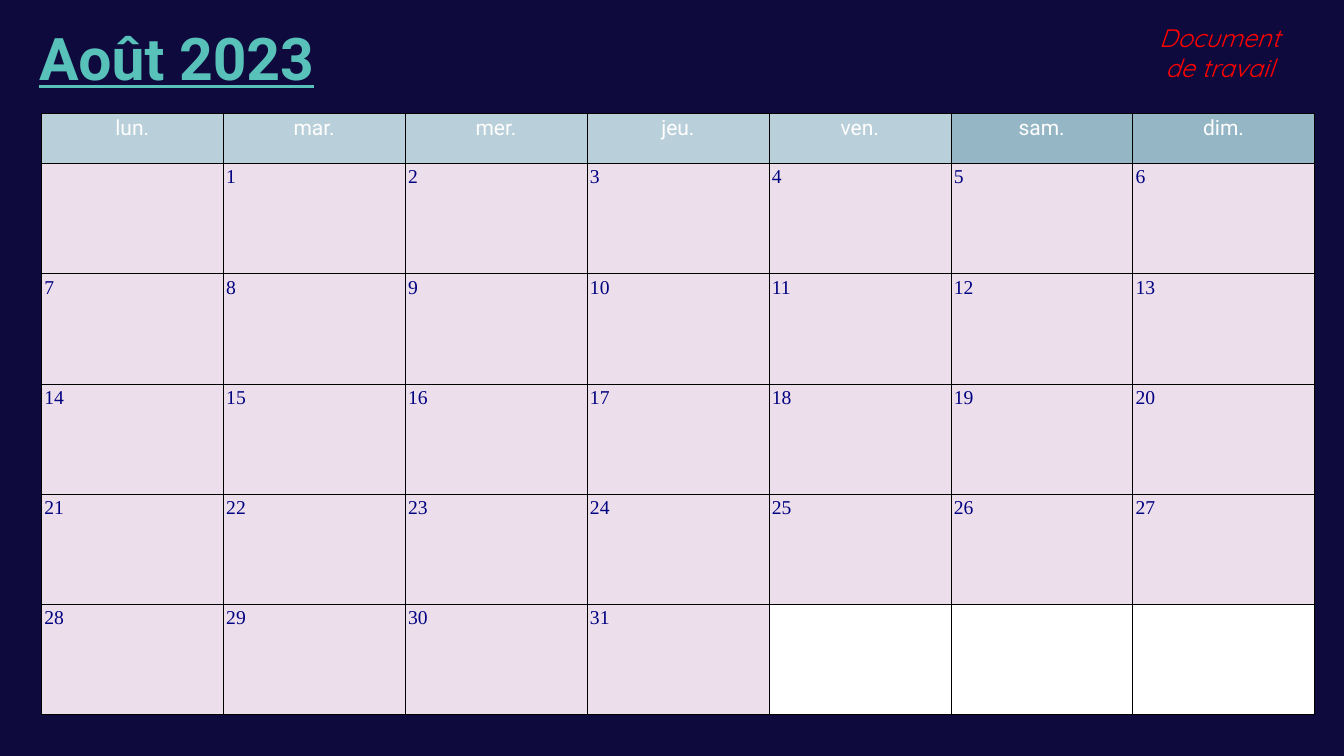
from dataclasses import dataclass

from lxml import etree
from pptx import Presentation
from pptx.dml.color import RGBColor
from pptx.enum.shapes import MSO_SHAPE
from pptx.enum.text import MSO_ANCHOR, PP_ALIGN
from pptx.oxml.ns import qn
from pptx.util import Inches, Pt

RECT = MSO_SHAPE.RECTANGLE
TOP = MSO_ANCHOR.TOP
LEFT, CENTER = PP_ALIGN.LEFT, PP_ALIGN.CENTER


@dataclass(frozen=True)
class Theme:
    night: str = "0F0A3D"
    title: str = "58C1BA"
    draft: str = "FF0000"
    weekday: str = "B9CFD9"
    weekend: str = "95B6C5"
    day: str = "ECDFEB"
    white: str = "FFFFFF"
    number: str = "000080"
    border: str = "000000"
    heading_font: str = "Roboto"
    draft_font: str = "Quicksand"
    number_font: str = "Times New Roman"
    title_size: int = 42
    draft_size: int = 18
    weekday_size: int = 15
    number_size: int = 14
    border_width: float = 0.25


THEME = Theme()
WEEKDAYS = ["lun.", "mar.", "mer.", "jeu.", "ven.", "sam.", "dim."]
FIRST_WEEKEND_COLUMN = 5
DAYS_IN_MONTH = 31
WEEKS = 5


def paint(fill, color):
    fill.solid()
    fill.fore_color.rgb = RGBColor.from_string(color)


def add_run(tf, text, font, size, color, align=LEFT):
    p = tf.paragraphs[0]
    p.alignment = align
    r = p.add_run()
    r.text = text
    r.font.name = font
    r.font.size = Pt(size)
    r.font.color.rgb = RGBColor.from_string(color)
    return r


def add_background(s, width, height):
    sp = s.shapes.add_shape(RECT, 0, 0, width, height)
    sp.shadow.inherit = False
    paint(sp.fill, THEME.night)
    sp.line.fill.background()


def add_text(s, left, top, width, height, *style):
    sp = s.shapes.add_textbox(Inches(left), Inches(top), Inches(width), Inches(height))
    tf = sp.text_frame
    tf.word_wrap = True
    tf.vertical_anchor = TOP
    return add_run(tf, *style)


def style_cell(cell, color):
    cell.margin_left = cell.margin_right = Inches(0.03)
    cell.margin_top = cell.margin_bottom = Inches(0.03)
    cell.vertical_anchor = TOP
    tc_pr = cell._tc.get_or_add_tcPr()
    for side in ("a:lnL", "a:lnR", "a:lnT", "a:lnB"):
        ln = etree.SubElement(tc_pr, qn(side), w=str(int(Pt(THEME.border_width))))
        solid = etree.SubElement(ln, qn("a:solidFill"))
        etree.SubElement(solid, qn("a:srgbClr"), val=THEME.border)
    paint(cell.fill, color)


def fill_header(table):
    for col, name in enumerate(WEEKDAYS):
        cell = table.cell(0, col)
        style_cell(cell, THEME.weekend if col >= FIRST_WEEKEND_COLUMN else THEME.weekday)
        add_run(cell.text_frame, name, THEME.heading_font, THEME.weekday_size,
                THEME.white, CENTER)


def fill_days(table):
    for week in range(WEEKS):
        for col in range(len(WEEKDAYS)):
            day = week * len(WEEKDAYS) + col
            cell = table.cell(week + 1, col)
            style_cell(cell, THEME.day if day <= DAYS_IN_MONTH else THEME.white)
            if 1 <= day <= DAYS_IN_MONTH:
                add_run(cell.text_frame, str(day), THEME.number_font,
                        THEME.number_size, THEME.number)


def add_calendar(s):
    frame = s.shapes.add_table(WEEKS + 1, len(WEEKDAYS), Inches(0.41), Inches(1.12),
                               Inches(12.63), Inches(5.97))
    table = frame.table
    table.horz_banding = False
    for row in table.rows:
        row.height = Inches(1.094)
    table.rows[0].height = Inches(0.5)
    fill_header(table)
    fill_days(table)


def main():
    prs = Presentation()
    prs.slide_width = Inches(13.33)
    prs.slide_height = Inches(7.5)
    s = prs.slides.add_slide(prs.slide_layouts[6])
    add_background(s, prs.slide_width, prs.slide_height)
    title = add_text(s, 0.29, 0.17, 10.29, 1.53, "Août 2023", THEME.heading_font,
                     THEME.title_size, THEME.title)
    title.font.bold = True
    title.font.underline = True
    add_calendar(s)
    draft = add_text(s, 11.27, 0.17, 1.65, 0.71, "Document de travail",
                     THEME.draft_font, THEME.draft_size, THEME.draft, CENTER)
    draft.font.italic = True
    prs.save("out.pptx")


if __name__ == "__main__":
    main()
